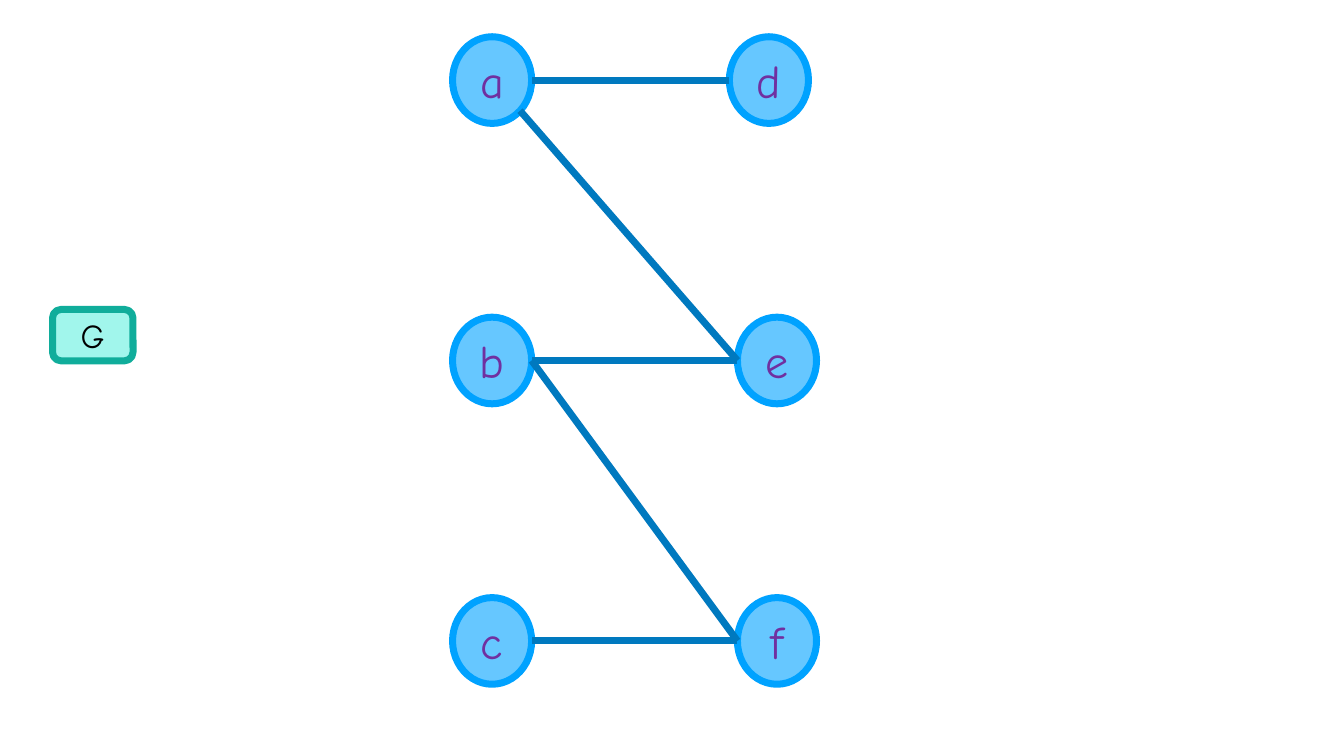
from math import cos, radians, sin

from lxml import etree
from pptx import Presentation
from pptx.dml.color import RGBColor
from pptx.enum import shapes, text
from pptx.oxml import ns
from pptx.util import Pt

COLORS = {
    "node": "66C7FF", "node_border": "00A2FF", "node_label": "7030A0",
    "edge": "0079BF",
    "tag": "A1F6EC", "tag_border": "10AD9B", "tag_label": "000000",
}
FONT = "Comic Neue"
STROKE = 10
NODE_WIDTH, NODE_HEIGHT = 113, 123.8
LEFT_NODES, RIGHT_NODES = "abc", "def"
TOP_RIGHT_SHIFT = -11.5
RIGHT, LOWER_RIGHT = 0, 45
EDGES = [("d", "a", RIGHT), ("e", "a", LOWER_RIGHT), ("e", "b", RIGHT),
         ("f", "b", RIGHT), ("f", "c", RIGHT)]


def color(name):
    """Return the named colour."""
    return RGBColor.from_string(COLORS[name])


def add_labelled(slide, preset, box, label, size, role):
    """Draw a bordered shape with a centred label."""
    shape = slide.shapes.add_shape(preset, *map(Pt, box))
    shape.shadow.inherit = False
    shape.fill.solid()
    shape.fill.fore_color.rgb = color(role)
    shape.line.color.rgb = color(f"{role}_border")
    shape.line.width = Pt(STROKE)
    frame = shape.text_frame
    frame.word_wrap = True
    frame.vertical_anchor = text.MSO_ANCHOR.MIDDLE
    frame.margin_left = frame.margin_right = Pt(4)
    frame.margin_top = frame.margin_bottom = Pt(4)
    paragraph = frame.paragraphs[0]
    paragraph.text = label
    paragraph.alignment = text.PP_ALIGN.CENTER
    paragraph.font.name = FONT
    paragraph.font.size = Pt(size)
    paragraph.font.color.rgb = color(f"{role}_label")


def add_edge(slide, start, end):
    """Draw a straight edge between two points."""
    edge = slide.shapes.add_connector(
        shapes.MSO_CONNECTOR.STRAIGHT, *map(Pt, start + end))
    edge.line.color.rgb = color("edge")
    edge.line.width = Pt(STROKE)
    etree.SubElement(edge._element.spPr, ns.qn("a:effectLst"))


def rim(center, angle):
    """Return the point on a node's outline at a clockwise angle."""
    return (center[0] + NODE_WIDTH / 2 * cos(radians(angle)),
            center[1] + NODE_HEIGHT / 2 * sin(radians(angle)))


def add_graph(slide, left, top, width, height):
    """Draw the bipartite graph inside the given box."""
    pitch = (height - NODE_HEIGHT) / (len(LEFT_NODES) - 1)
    centers = {}
    for row, (left_node, right_node) in enumerate(zip(LEFT_NODES, RIGHT_NODES)):
        y = top + NODE_HEIGHT / 2 + row * pitch
        shift = TOP_RIGHT_SHIFT if row == 0 else 0
        centers[left_node] = (left + NODE_WIDTH / 2, y)
        centers[right_node] = (left + width - NODE_WIDTH / 2 + shift, y)
    for label, (x, y) in centers.items():
        box = (x - NODE_WIDTH / 2, y - NODE_HEIGHT / 2, NODE_WIDTH, NODE_HEIGHT)
        add_labelled(slide, shapes.MSO_SHAPE.OVAL, box, label, 66, "node")
    for start, end, angle in EDGES:
        add_edge(slide, rim(centers[start], 180), rim(centers[end], angle))


def add_graph_tag(slide, left, top, width, height):
    """Draw the tag that names the graph."""
    add_labelled(slide, shapes.MSO_SHAPE.ROUNDED_RECTANGLE,
                 (left, top, width, height), "G", 48, "tag")


def main():
    """Build and save the slide."""
    deck = Presentation()
    deck.slide_width, deck.slide_height = Pt(1920), Pt(1080)
    slide = deck.slides.add_slide(deck.slide_layouts[6])
    add_graph(slide, 646.5, 52.5, 520, 925)
    add_graph_tag(slide, 75, 442, 115, 73.5)
    deck.save("out.pptx")


if __name__ == "__main__":
    main()
